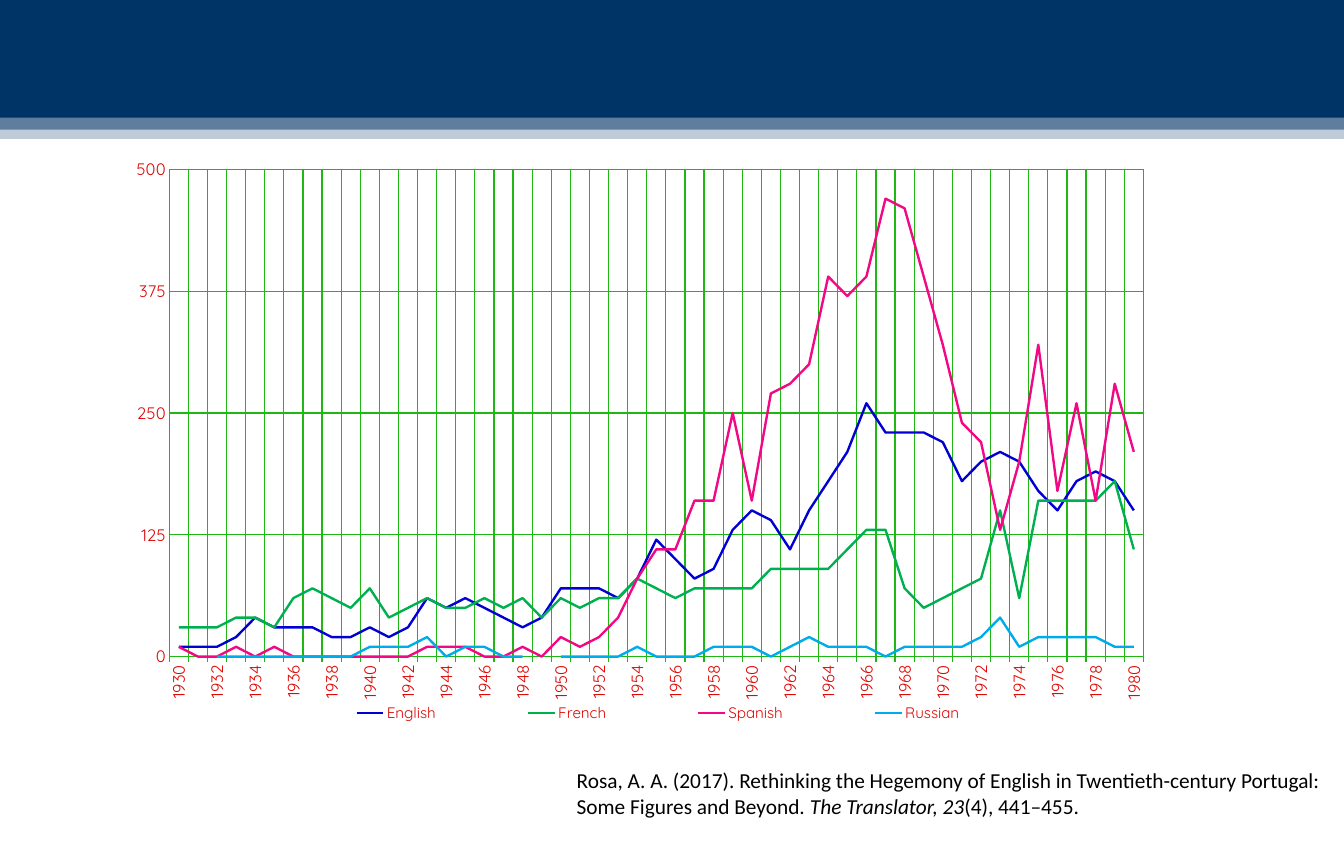
import pptx
import pptx.chart.data
import pptx.dml.color
import pptx.enum.chart
import pptx.enum.shapes
import pptx.enum.text
import pptx.oxml
import pptx.oxml.ns
import pptx.util
from pptx.util import Inches

RGB = pptx.dml.color.RGBColor
NAVY = RGB(0x00, 0x33, 0x66)
RED = RGB(0xDD, 0x08, 0x06)
GRID = RGB(0x1F, 0xB7, 0x14)
BLACK = RGB(0x00, 0x00, 0x00)
BLUE = RGB(0x00, 0x00, 0xD4)
GREEN = RGB(0x00, 0xB0, 0x50)
PINK = RGB(0xF2, 0x08, 0x84)
CYAN = RGB(0x00, 0xAB, 0xEA)

YEARS = range(1930, 1981)
SERIES = [
    ("English", BLUE, [
        10, 10, 10, 20, 40, 30, 30, 30, 20, 20,
        30, 20, 30, 60, 50, 60, 50, 40, 30, 40,
        70, 70, 70, 60, 80, 120, 100, 80, 90, 130,
        150, 140, 110, 150, 180, 210, 260, 230, 230, 230,
        220, 180, 200, 210, 200, 170, 150, 180, 190, 180, 150]),
    ("French", GREEN, [
        30, 30, 30, 40, 40, 30, 60, 70, 60, 50,
        70, 40, 50, 60, 50, 50, 60, 50, 60, 40,
        60, 50, 60, 60, 80, 70, 60, 70, 70, 70,
        70, 90, 90, 90, 90, 110, 130, 130, 70, 50,
        60, 70, 80, 150, 60, 160, 160, 160, 160, 180, 110]),
    ("Spanish", PINK, [
        10, 0, 0, 10, 0, 10, 0, 0, 0, 0,
        0, 0, 0, 10, 10, 10, 0, 0, 10, 0,
        20, 10, 20, 40, 80, 110, 110, 160, 160, 250,
        160, 270, 280, 300, 390, 370, 390, 470, 460, 390,
        320, 240, 220, 130, 200, 320, 170, 260, 160, 280, 210]),
    ("Russian", CYAN, [
        0, None, 0, 0, 0, 0, 0, 0, 0, 0,
        10, 10, 10, 20, 0, 10, 10, 0, 0, None,
        0, 0, 0, 0, 10, 0, 0, 0, 10, 10,
        10, 0, 10, 20, 10, 10, 10, 0, 10, 10,
        10, 10, 20, 40, 10, 20, 20, 20, 20, 10, 10]),
]


def add_band(slide, height, alpha):
    """Draw a full-width navy band at the top, with opacity in percent."""
    band = slide.shapes.add_shape(
        pptx.enum.shapes.MSO_SHAPE.RECTANGLE,
        Inches(-0.01), 0, Inches(15.78), Inches(height))
    band.shadow.inherit = False
    band.line.fill.background()
    band.fill.solid()
    band.fill.fore_color.rgb = NAVY
    if alpha < 100:
        color = band._element.spPr.find(".//" + pptx.oxml.ns.qn("a:srgbClr"))
        color.append(pptx.oxml.parse_xml(
            f'<a:alpha {pptx.oxml.ns.nsdecls("a")} val="{alpha * 1000}"/>'))


def set_font(font, size, color, name="Quicksand", italic=None):
    font.size = pptx.util.Pt(size)
    font.color.rgb = color
    font.name = name
    font.italic = italic


def add_run(para, text, **style):
    run = para.add_run()
    run.text = text
    set_font(run.font, **style)


def set_line(line, color, width):
    line.color.rgb = color
    line.width = pptx.util.Pt(width)


def set_layout(parent, index, box, inner=False):
    """Give a chart part a fixed place, as fractions of the chart."""
    old = parent.find(pptx.oxml.ns.qn("c:layout"))
    if old is not None:
        parent.remove(old)
    target = '<c:layoutTarget val="inner"/>' if inner else ""
    modes = "".join(f'<c:{k}Mode val="edge"/>' for k in "xy")
    sizes = "".join(f'<c:{k} val="{v}"/>' for k, v in zip("xywh", box))
    parent.insert(index, pptx.oxml.parse_xml(
        f'<c:layout {pptx.oxml.ns.nsdecls("c")}><c:manualLayout>'
        f'{target}{modes}{sizes}</c:manualLayout></c:layout>'))


def style_axis(axis, tick):
    axis.has_major_gridlines = True
    set_line(axis.major_gridlines.format.line, GRID, 1)
    axis.major_tick_mark = tick
    axis.minor_tick_mark = pptx.enum.chart.XL_TICK_MARK.NONE
    set_font(axis.tick_labels.font, 14, RED)


def style_years(axis):
    """Turn the year labels upright and show every second one."""
    style_axis(axis, pptx.enum.chart.XL_TICK_MARK.OUTSIDE)
    set_line(axis.format.line, GRID, 1)
    node = axis._element
    body = node.find(".//" + pptx.oxml.ns.qn("a:bodyPr"))
    body.set("rot", "-5400000")
    body.set("vert", "horz")
    node.find(pptx.oxml.ns.qn("c:noMultiLvlLbl")).addprevious(
        pptx.oxml.parse_xml(
            f'<c:tickLblSkip {pptx.oxml.ns.nsdecls("c")} val="2"/>'))


def style_counts(axis):
    style_axis(axis, pptx.enum.chart.XL_TICK_MARK.NONE)
    axis.format.line.fill.background()
    axis.minimum_scale = 0
    axis.maximum_scale = 500
    axis.major_unit = 125
    axis.tick_labels.number_format = "0"
    axis.tick_labels.number_format_is_linked = False


def add_chart(slide):
    data = pptx.chart.data.CategoryChartData()
    data.categories = [str(year) for year in YEARS]
    for name, _, values in SERIES:
        data.add_series(name, values)
    chart = slide.shapes.add_chart(
        pptx.enum.chart.XL_CHART_TYPE.LINE,
        Inches(1.48), Inches(1.77), Inches(11.98), Inches(6.76), data).chart
    chart.has_title = False
    set_font(chart.font, 10, BLACK, "Calibri")
    plot = chart.plots[0]
    plot.vary_by_categories = False
    for series, (_, color, _) in zip(plot.series, SERIES):
        series.smooth = False
        series.marker.style = pptx.enum.chart.XL_MARKER_STYLE.NONE
        set_line(series.format.line, color, 2)
    style_years(chart.category_axis)
    style_counts(chart.value_axis)
    chart.has_legend = True
    legend = chart.legend
    legend.position = pptx.enum.chart.XL_LEGEND_POSITION.BOTTOM
    legend.include_in_layout = True
    set_font(legend.font, 12.8, RED)
    set_layout(legend._element, 1, (0.14, 0.95, 0.76, 0.05))
    area = chart._chartSpace.find(".//" + pptx.oxml.ns.qn("c:plotArea"))
    set_layout(area, 0, (0.042, 0.032, 0.953, 0.845), inner=True)


def add_source(slide):
    frame = slide.shapes.add_textbox(
        Inches(6.66), Inches(8.95), Inches(9.07), Inches(0.71)).text_frame
    frame.word_wrap = True
    frame.auto_size = pptx.enum.text.MSO_AUTO_SIZE.SHAPE_TO_FIT_TEXT
    style = {"size": 18, "color": BLACK, "name": "Calibri"}
    add_run(frame.paragraphs[0],
            "Rosa, A. A. (2017). Rethinking the Hegemony of English in "
            "Twentieth-century Portugal: ", **style)
    para = frame.add_paragraph()
    add_run(para, "Some Figures and Beyond. ", **style)
    add_run(para, "The Translator, 23", italic=True, **style)
    add_run(para, "(4), 441–455.", **style)


def main():
    deck = pptx.Presentation()
    deck.slide_width = Inches(15.75)
    deck.slide_height = Inches(10)
    slide = deck.slides.add_slide(deck.slide_layouts[6])
    for height, alpha in ((1.63, 25), (1.52, 50), (1.38, 100)):
        add_band(slide, height, alpha)
    add_chart(slide)
    add_source(slide)
    deck.save("out.pptx")


if __name__ == "__main__":
    main()
